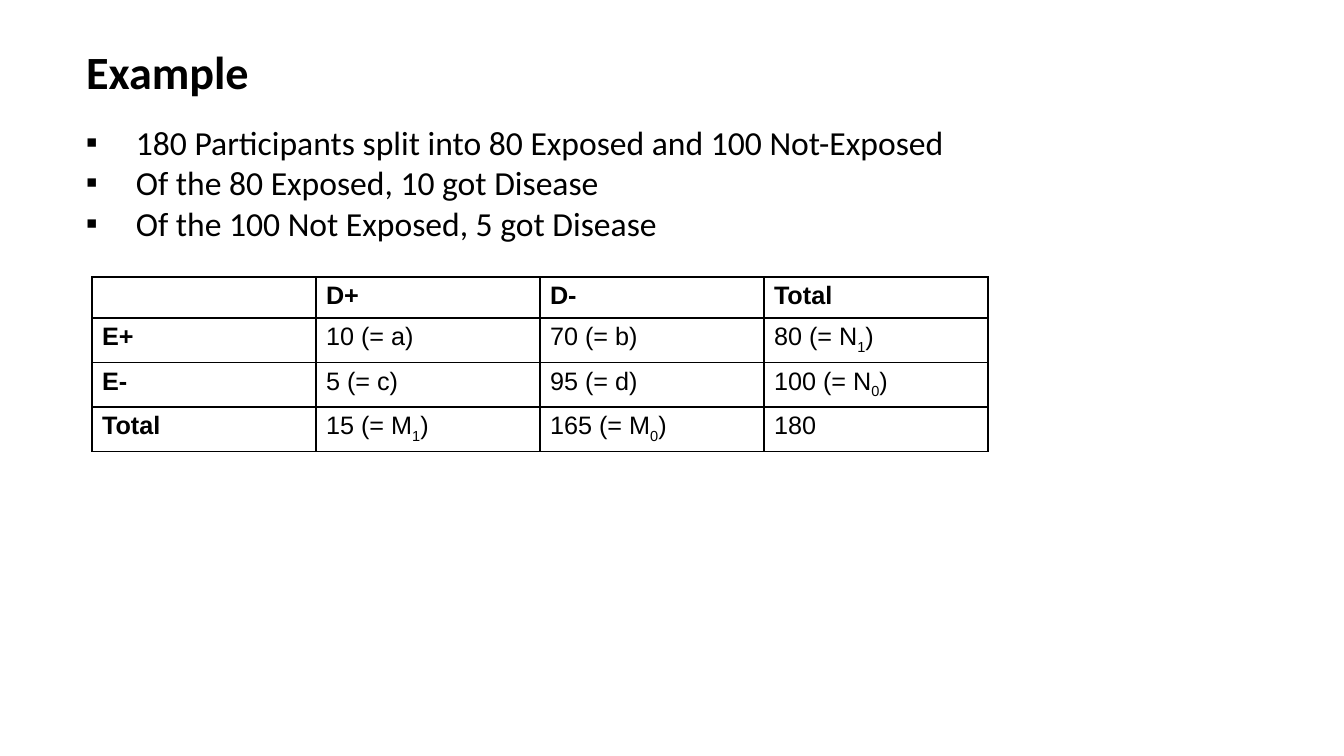
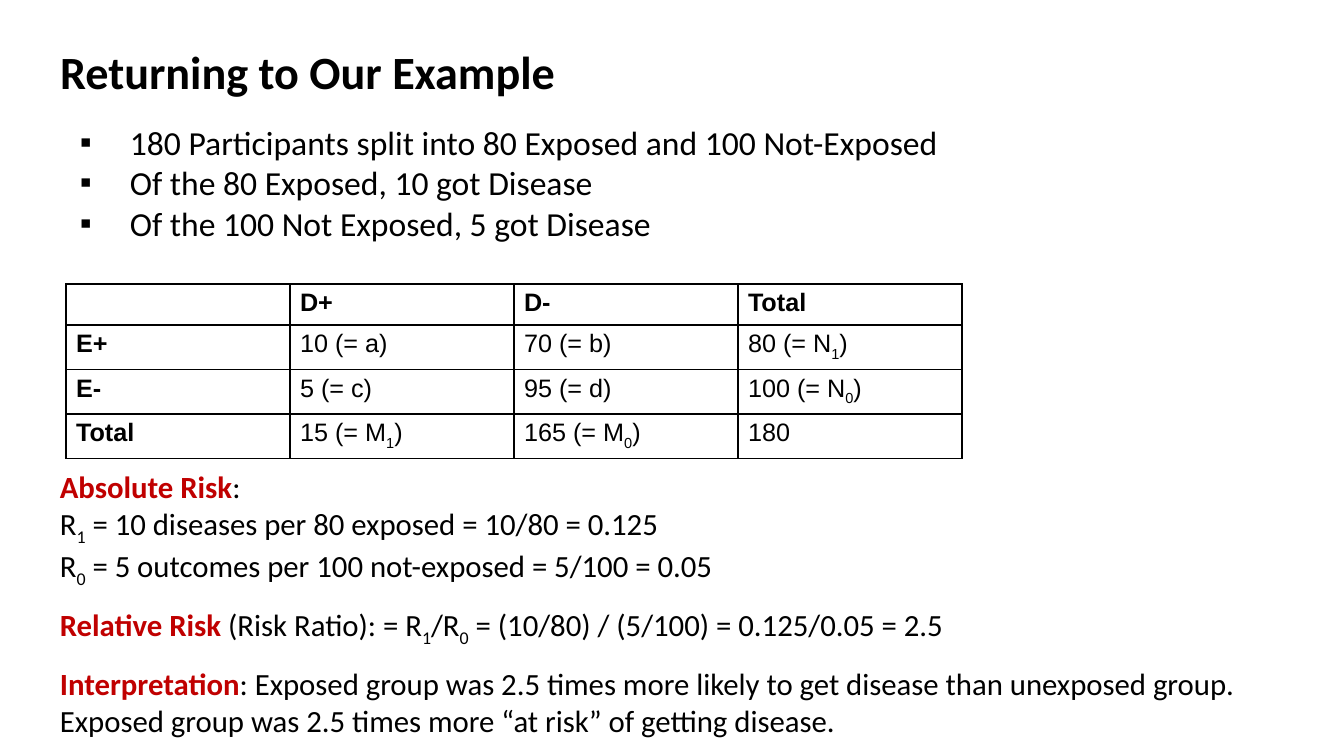
from lxml.etree import SubElement
from pptx import Presentation
from pptx.dml.color import RGBColor
from pptx.enum.text import MSO_ANCHOR, MSO_AUTO_SIZE, PP_ALIGN
from pptx.oxml.ns import qn
from pptx.util import Emu, Pt

PX_PER_INCH = 100.8
SLIDE_SIZE = (1344, 756)
COLORS = {"text": "000000", "accent": "C00000", "border": "000000"}
HEADING_FONT, TABLE_FONT = "Calibri", "Arial"
TITLE_SIZE = (886, 92)
BULLETS_SIZE = (887, 132)
TITLE_TOP, BULLETS_TOP = 25, 117
COL_WIDTH, ROW_HEIGHT = 224, 41
BULLET_INDENT = 50

FINDINGS = [
    "180 Participants split into 80 Exposed and 100 Not-Exposed",
    "Of the 80 Exposed, 10 got Disease",
    "Of the 100 Not Exposed, 5 got Disease",
]
COUNTS = [
    ["", "D+", "D-", "Total"],
    ["E+", "10 (= a)", "70 (= b)", "80 (= N_1)"],
    ["E-", "5 (= c)", "95 (= d)", "100 (= N_0)"],
    ["Total", "15 (= M_1)", "165 (= M_0)", "180"],
]
# Each risk line with the space after it in points
RISKS = [
    ("*Absolute Risk*:", 0),
    ("R_1 = 10 diseases per 80 exposed = 10/80 = 0.125", 0),
    ("R_0 = 5 outcomes per 100 not-exposed = 5/100 = 0.05", 12),
    ("*Relative Risk *(Risk Ratio): = R_1/R_0 = (10/80) / (5/100) = 0.125/0.05 = 2.5", 12),
    ("*Interpretation*: Exposed group was 2.5 times more likely to get disease than "
     "unexposed group. Exposed group was 2.5 times more “at risk” of getting disease.", 12),
]


def px(length):
    return Emu(round(length * 914400 / PX_PER_INCH))


def split_markup(text):
    """Yield (piece, accented, subscript); *x* is accented, _x lowers one character."""
    for i, part in enumerate(text.split("*")):
        accented = i % 2 == 1
        first, *lowered = part.split("_")
        pieces = [(first, False)]
        for tail in lowered:
            pieces += [(tail[0], True), (tail[1:], False)]
        for piece, subscript in pieces:
            if piece:
                yield piece, accented, subscript


def write(paragraph, text, *, size, font=HEADING_FONT, bold=False, space_after=0):
    paragraph.alignment = PP_ALIGN.LEFT
    paragraph.space_after = Pt(space_after)
    paragraph.font.size = Pt(size)
    for piece, accented, subscript in split_markup(text):
        run = paragraph.add_run()
        run.text = piece
        run.font.name = font
        run.font.size = Pt(size)
        run.font.bold = bold or accented
        color = COLORS["accent" if accented else "text"]
        run.font.color.rgb = RGBColor.from_string(color)
        if subscript:
            run._r.get_or_add_rPr().set("baseline", "-25000")


def add_bullet(paragraph):
    properties = paragraph._p.get_or_add_pPr()
    properties.set("marL", str(px(BULLET_INDENT)))
    properties.set("indent", str(-px(BULLET_INDENT)))
    SubElement(properties, qn("a:buFont"), typeface=TABLE_FONT)
    SubElement(properties, qn("a:buChar"), char="▪")


def add_border(cell):
    properties = cell._tc.get_or_add_tcPr()
    for side in ("lnL", "lnR", "lnT", "lnB"):
        line = SubElement(properties, qn(f"a:{side}"), w=str(Pt(1)))
        fill = SubElement(line, qn("a:solidFill"))
        SubElement(fill, qn("a:srgbClr"), val=COLORS["border"])


def place_title(slide, text, left):
    title = slide.shapes.title
    title.left, title.top = px(left), px(TITLE_TOP)
    title.width, title.height = map(px, TITLE_SIZE)
    frame = title.text_frame
    frame.auto_size = MSO_AUTO_SIZE.NONE
    frame.vertical_anchor = MSO_ANCHOR.MIDDLE
    write(frame.paragraphs[0], text, size=33, bold=True)


def add_paragraphs(slide, box, lines, *, size, bulleted=False):
    """Add a text box of (text, space after) lines."""
    frame = slide.shapes.add_textbox(*map(px, box)).text_frame
    frame.word_wrap = True
    for i, (text, space_after) in enumerate(lines):
        paragraph = frame.add_paragraph() if i else frame.paragraphs[0]
        write(paragraph, text, size=size, space_after=space_after)
        if bulleted:
            add_bullet(paragraph)


def add_counts_table(slide, left, top):
    rows, cols = len(COUNTS), len(COUNTS[0])
    box = (left, top, cols * COL_WIDTH, rows * ROW_HEIGHT)
    table = slide.shapes.add_table(rows, cols, *map(px, box)).table
    table.first_row = table.horz_banding = False
    for r, values in enumerate(COUNTS):
        for c, value in enumerate(values):
            cell = table.cell(r, c)
            add_border(cell)
            cell.fill.background()
            write(cell.text_frame.paragraphs[0], value, size=18,
                  font=TABLE_FONT, bold=r == 0 or c == 0)


def add_example_slide(deck, title, *, title_left, bullets_left, table_at):
    slide = deck.slides.add_slide(deck.slide_layouts[5])
    place_title(slide, title, title_left)
    add_paragraphs(slide, (bullets_left, BULLETS_TOP, *BULLETS_SIZE),
                   [(finding, 0) for finding in FINDINGS], size=24, bulleted=True)
    add_counts_table(slide, *table_at)
    return slide


def main():
    deck = Presentation()
    deck.slide_width, deck.slide_height = map(px, SLIDE_SIZE)
    add_example_slide(deck, "Example", title_left=76, bullets_left=76, table_at=(92, 277))
    returning = add_example_slide(deck, "Returning to Our Example", title_left=50,
                                  bullets_left=70, table_at=(66, 284))
    add_paragraphs(returning, (50, 463, 1293, 268), RISKS, size=22)
    deck.save("out.pptx")


if __name__ == "__main__":
    main()
